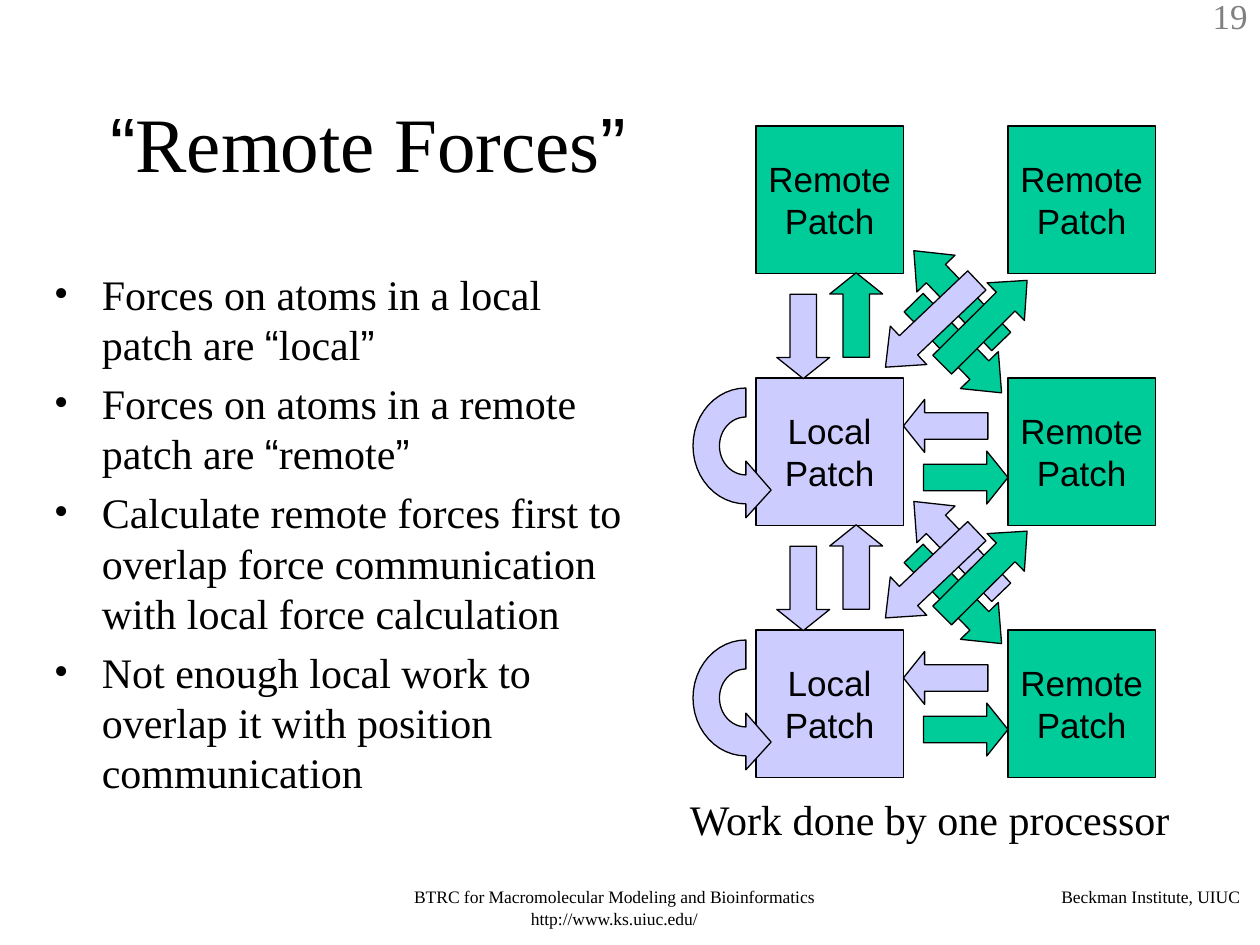
from math import cos, pi, sin

from lxml.etree import SubElement
from pptx import Presentation
from pptx.dml.color import RGBColor
from pptx.enum.shapes import MSO_SHAPE as SHAPE
from pptx.enum.text import MSO_ANCHOR as ANCHOR, PP_ALIGN as ALIGN
from pptx.oxml.ns import qn
from pptx.util import Inches, Pt

COLORS = {"local": "CCCCFF", "remote": "00CC99", "black": "000000", "gray": "808080"}
SERIF, SANS = "Times New Roman", "Arial"
PATCH = 1.17
PITCH = 2
BULLETS = [
    "Forces on atoms in a local patch are “local”",
    "Forces on atoms in a remote patch are “remote”",
    "Calculate remote forces first to overlap force communication with local force calculation",
    "Not enough local work to overlap it with position communication",
]
STRAIGHT_ARROWS = [
    (6.04, 2.46, 90, "local"),
    (6.46, 2.29, 270, None),
    (7.17, 3.17, 180, "local"),
    (7.33, 3.58, 0, "remote"),
]
DIAGONAL_ARROWS = [
    (7.1, 2.14, 1, 226.1, None),
    (7.1, 2.55, 1, 45.7, "remote"),
    (6.89, 2.36, 1, 136.5, "local"),
    (7.34, 2.35, 0.95, 315.2, "remote"),
]


def rgb(name):
    return RGBColor.from_string(COLORS[name])


def split_quotes(text):
    for mark in "“”":
        text = text.replace(mark, f"\n{mark}\n")
    return [part for part in text.split("\n") if part]


def add_bullet(p):
    pPr = p._p.get_or_add_pPr()
    pPr.set("marL", str(Inches(0.38)))
    pPr.set("indent", str(-Inches(0.38)))
    SubElement(pPr, qn("a:buFont")).set("typeface", SERIF)
    SubElement(pPr, qn("a:buChar")).set("char", "•")


def write(tf, paragraphs, size, font=SERIF, color="black", align=ALIGN.LEFT,
          anchor=ANCHOR.TOP, wrap=True, bullet=False, gap=0, spacing=None):
    tf.word_wrap = wrap
    tf.vertical_anchor = anchor
    for i, text in enumerate(paragraphs):
        p = tf.paragraphs[0] if i == 0 else tf.add_paragraph()
        p.alignment = align
        if spacing and i == 0:
            p.line_spacing = spacing
        if gap and i:
            p.space_before = Pt(gap)
        if bullet:
            add_bullet(p)
        for part in split_quotes(text):
            r = p.add_run()
            r.text = part
            r.font.size = Pt(size)
            r.font.name = SANS if part in "“”" else font
            r.font.color.rgb = rgb(color)


def add_text(s, x, y, w, h, paragraphs, size, **fmt):
    box = s.shapes.add_textbox(Inches(x), Inches(y), Inches(w), Inches(h))
    write(box.text_frame, paragraphs, size, **fmt)


def paint(shape, color):
    shape.shadow.inherit = False
    shape.fill.solid()
    shape.fill.fore_color.rgb = rgb(color)
    shape.line.color.rgb = rgb("black")
    shape.line.width = Pt(0.75)


def add_patch(s, x, y, kind):
    sp = s.shapes.add_shape(SHAPE.RECTANGLE, Inches(x), Inches(y), Inches(PATCH), Inches(PATCH))
    paint(sp, kind)
    write(sp.text_frame, [kind.title(), "Patch"], 20, font=SANS,
          align=ALIGN.CENTER, anchor=ANCHOR.MIDDLE, wrap=False)


def add_arrow(s, x, y, length, angle, color):
    width = 0.42
    sp = s.shapes.add_shape(SHAPE.RIGHT_ARROW, Inches(x), Inches(y), Inches(length), Inches(width))
    sp.adjustments[0] = 0.5
    sp.adjustments[1] = 0.4 if length < 0.9 else 0.6 * length
    sp.rotation = angle
    paint(sp, color)


def add_self_arrow(s, x, y):
    steps = 24
    angles = [pi / 2 + pi * i / steps for i in range(steps + 1)]
    inner = [(x + 0.21 * cos(a), y + 0.23 * sin(a)) for a in angles]
    outer = [(x + 0.42 * cos(a), y + 0.46 * sin(a)) for a in reversed(angles)]
    head = [(x, y + 0.57), (x + 0.2, y + 0.35), (x, y + 0.12)]
    points = [(Inches(px), Inches(py)) for px, py in inner + outer + head]
    builder = s.shapes.build_freeform(*points[0], scale=1.0)
    builder.add_line_segments(points[1:], close=True)
    paint(builder.convert_to_shape(), "local")


def add_title(s, text):
    title = s.shapes.title
    title.left, title.top = Inches(0.67), Inches(0.5)
    title.width, title.height = Inches(4.5), Inches(1.25)
    write(title.text_frame, [text], 44, align=ALIGN.CENTER, anchor=ANCHOR.MIDDLE)


def add_diagram(s):
    kinds = ["remote", "local", "local"]
    for row, kind in enumerate(kinds):
        add_patch(s, 6, 1 + PITCH * row, kind)
        add_patch(s, 8, 1 + PITCH * row, "remote")
    for row, upper in enumerate(kinds[:2]):
        dy = PITCH * row
        add_self_arrow(s, 5.92, 3.54 + dy)
        for x, y, angle, color in STRAIGHT_ARROWS:
            add_arrow(s, x, y + dy, 0.67, angle, color or upper)
        for x, y, length, angle, color in DIAGONAL_ARROWS:
            add_arrow(s, x, y + 1.99 * row, length, angle, color or upper)


def main():
    prs = Presentation()
    prs.slide_width, prs.slide_height = Inches(10), Inches(7.5)
    s = prs.slides.add_slide(prs.slide_layouts[5])
    add_text(s, 2.42, 7, 4.91, 0.43,
             ["BTRC for Macromolecular Modeling and Bioinformatics", "http://www.ks.uiuc.edu/"],
             10, align=ALIGN.CENTER, spacing=0.93)
    add_text(s, 8.31, 7, 1.63, 0.26, ["Beckman Institute, UIUC"], 10,
             align=ALIGN.RIGHT, wrap=False, spacing=0.93)
    add_text(s, 9.25, -0.09, 0.75, 0.44, ["19"], 20, color="gray", align=ALIGN.RIGHT)
    add_title(s, "“Remote Forces”")
    add_text(s, 0.33, 2.08, 4.83, 4.5, BULLETS, 24, bullet=True, gap=4.8)
    add_diagram(s)
    add_text(s, 5.33, 6.25, 4.05, 0.5, ["Work done by one processor"], 24,
             align=ALIGN.RIGHT, wrap=False)
    prs.save("out.pptx")


if __name__ == "__main__":
    main()
